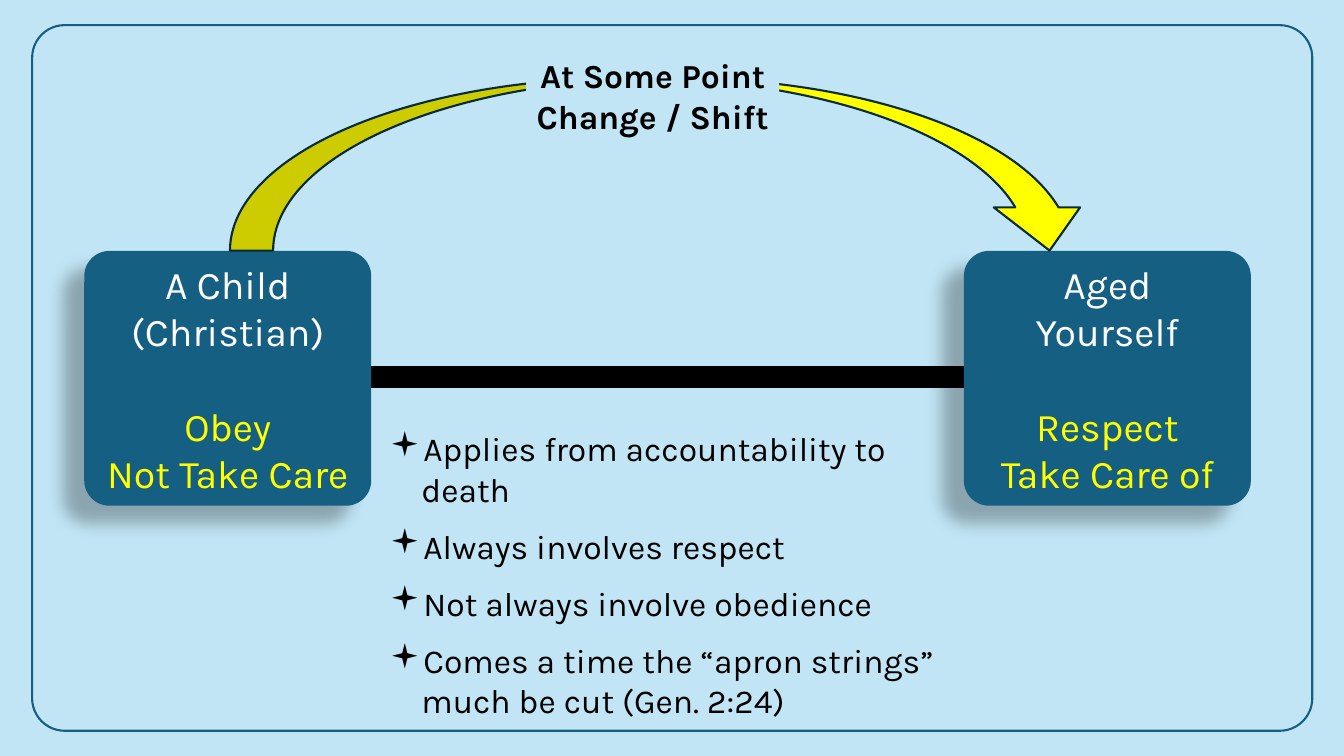
"""Build the slide on the shift from obeying parents to caring for them."""
import pptx
import pptx.dml.color
import pptx.enum.shapes
import pptx.enum.text
import pptx.util
from lxml import etree

Pt = pptx.util.Pt
RGB = pptx.dml.color.RGBColor.from_string
MSO = pptx.enum.shapes.MSO_SHAPE
ANCHOR = pptx.enum.text.MSO_ANCHOR
ALIGN = pptx.enum.text.PP_ALIGN
FIT = pptx.enum.text.MSO_AUTO_SIZE.SHAPE_TO_FIT_TEXT
A = "http://schemas.openxmlformats.org/drawingml/2006/main"
COLORS = {"sky": "C1E5F5", "blue": "156082", "navy": "092A39",
          "yellow": "FFFF00", "white": "FFFFFF", "black": "000000"}
SHADOW = f"""<a:effectLst xmlns:a="{A}">
<a:outerShdw blurRad="{Pt(11.8)}" dist="{Pt(19.7)}" dir="{141 * 60000}" algn="ctr" rotWithShape="0">
<a:srgbClr val="{COLORS['black']}"><a:alpha val="28000"/></a:srgbClr>
</a:outerShdw></a:effectLst>"""


def add_shape(kind, box, fill=None, line=None, corner=None):
    sp = s.shapes.add_shape(kind, *[Pt(v) for v in box])
    sp.shadow.inherit = False
    if fill:
        sp.fill.solid()
        sp.fill.fore_color.rgb = RGB(COLORS[fill])
    else:
        sp.fill.background()
    if line:
        sp.line.color.rgb = RGB(COLORS[line])
        sp.line.width = Pt(1.5)
    else:
        sp.line.fill.background()
    if corner:
        sp.adjustments[0] = corner
    return sp


def add_line(tf, i, text, size, color="black", **paragraph_format):
    p = tf.paragraphs[0] if i == 0 else tf.add_paragraph()
    for name, value in paragraph_format.items():
        setattr(p, name, value)
    r = p.add_run()
    r.text = text
    r.font.color.rgb = RGB(COLORS[color])
    for name, value in {"name": "Karla", "size": Pt(size)}.items():
        setattr(r.font, name, value)
    return p


prs = pptx.Presentation()
prs.slide_width, prs.slide_height = Pt(960), Pt(540)
s = prs.slides.add_slide(prs.slide_layouts[6])
s.background.fill.solid()
s.background.fill.fore_color.rgb = RGB(COLORS["sky"])

add_shape(MSO.ROUNDED_RECTANGLE, (23, 18, 914.4, 504), line="blue", corner=0.046)
add_shape(MSO.RECTANGLE, (233.3, 262, 494, 14.4), "black", "black")

stages = [
    (60.2, ["A Child", "(Christian)"], ["Obey", "Not Take Care"]),
    (688.5, ["Aged", "Yourself"], ["Respect", "Take Care of"]),
]
for left, who, duty in stages:
    sp = add_shape(MSO.ROUNDED_RECTANGLE, (left, 179.2, 205, 182), "blue", corner=0.099)
    effects = sp.element.spPr.find(f"{{{A}}}effectLst")
    effects.getparent().replace(effects, etree.fromstring(SHADOW))
    tf = sp.text_frame
    tf.word_wrap, tf.vertical_anchor = True, ANCHOR.MIDDLE
    for i, text in enumerate(who + duty):
        p = add_line(tf, i, text, 28, "white" if i < len(who) else "yellow",
                     alignment=ALIGN.CENTER)
        if i == len(who):
            p.space_before = Pt(33.6)

add_shape(MSO.CURVED_DOWN_ARROW, (164.3, 55.6, 616.3, 123.4), "yellow", "navy")

tf = add_shape(MSO.RECTANGLE, (375.8, 36, 180.7, 65.4), "sky").text_frame
tf.word_wrap, tf.auto_size, tf.vertical_anchor = True, FIT, ANCHOR.TOP
for i, text in enumerate(["At Some Point", "Change / Shift"]):
    add_line(tf, i, text, 24, alignment=ALIGN.CENTER).runs[0].font.bold = True

points = ["Applies from accountability to death", "Always involves respect",
          "Not always involve obedience",
          "Comes a time the “apron strings” much be cut (Gen. 2:24)"]
sp = s.shapes.add_textbox(Pt(271.4), Pt(302.4), Pt(416.2), Pt(189.4))
tf = sp.text_frame
tf.word_wrap, tf.auto_size = True, FIT
for i, text in enumerate(points):
    p = add_line(tf, i, text, 24, space_before=Pt(12 if i else 0))
    pPr = p._p.get_or_add_pPr()
    pPr.set("marL", str(Pt(22.5)))
    pPr.set("indent", str(-Pt(22.5)))
    etree.SubElement(pPr, f"{{{A}}}buFont", typeface="Wingdings")
    etree.SubElement(pPr, f"{{{A}}}buChar", char="▪")

prs.save("out.pptx")
